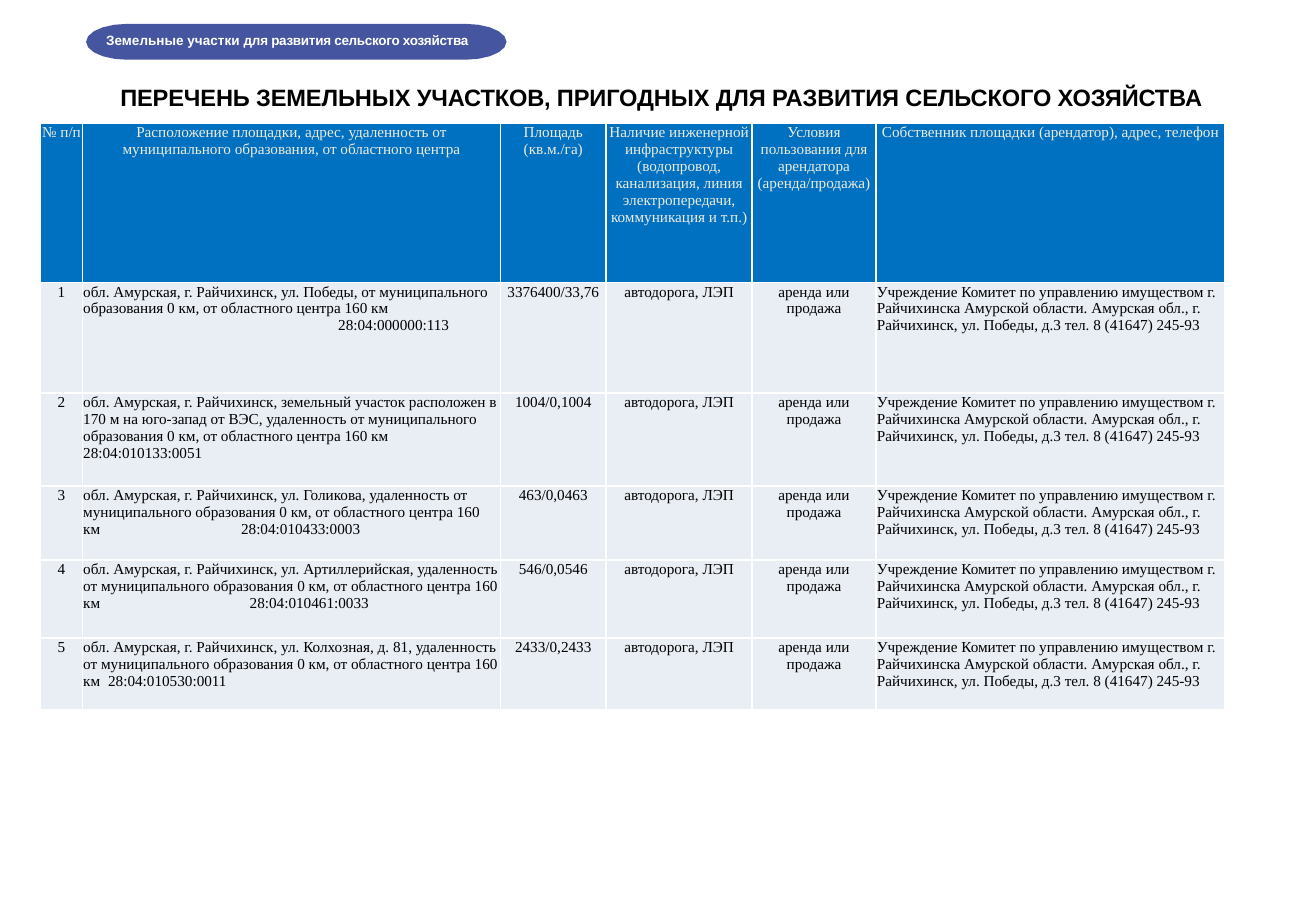
import math

from lxml import etree
from pptx import Presentation
from pptx import util as u
from pptx.dml.color import RGBColor
from pptx.enum import text
from pptx.oxml import ns

CENTER, LEFT = text.PP_ALIGN.CENTER, text.PP_ALIGN.LEFT
COLUMN_WIDTHS = [0.87, 8.74, 2.21, 3.05, 2.59, 7.29]
ROW_HEIGHTS = [3.33, 2.31, 1.94, 1.55, 1.63, 1.5]
COLUMN_ALIGNMENTS = [CENTER, LEFT, CENTER, CENTER, CENTER, LEFT]
HEADERS = [
    "№ п/п",
    "Расположение площадки, адрес, удаленность от муниципального образования, от областного центра",
    "Площадь (кв.м./га)",
    "Наличие инженерной инфраструктуры (водопровод, канализация, линия электропередачи, "
    "коммуникация и т.п.)",
    "Условия пользования для арендатора (аренда/продажа)",
    "Собственник площадки (арендатор), адрес, телефон",
]
DISTANCE = "муниципального образования 0 км, от областного центра 160 км"
# Location, separator, cadastral number, tab stop of the number in cm, area
PLOTS = [
    ("ул. Победы, от", "\v\t", "28:04:000000:113", 5.33, "3376400/33,76"),
    ("земельный участок расположен в 170 м на юго-запад от ВЭС, удаленность от",
     "\v", "28:04:010133:0051", None, "1004/0,1004"),
    ("ул. Голикова, удаленность от", "\t", "28:04:010433:0003", 3.3, "463/0,0463"),
    ("ул. Артиллерийская, удаленность от", "\t", "28:04:010461:0033", 3.48, "546/0,0546"),
    ("ул. Колхозная, д. 81, удаленность от", "\t", "28:04:010530:0011", 0.52, "2433/0,2433"),
]
OWNER = ("Учреждение Комитет по управлению имуществом г. Райчихинска Амурской области. "
         "Амурская обл., г. Райчихинск, ул. Победы, д.3 тел. 8 (41647) 245-93")


def rgb(color):
    return RGBColor.from_string(color)


def format_runs(paragraph, font, size, color, bold=False):
    for run in paragraph.runs:
        run.font.name = font
        run.font.size = u.Pt(size)
        run.font.bold = bold
        run.font.color.rgb = rgb(color)


def add_line_of_text(slide, box, parts, size, color, alignment):
    """Add bold text from (words, letter spacing in hundredths of a point) parts."""
    frame = slide.shapes.add_textbox(*map(u.Cm, box)).text_frame
    frame.word_wrap = True
    frame.margin_left = frame.margin_right = frame.margin_bottom = 0
    frame.margin_top = u.Cm(0.03)
    paragraph = frame.paragraphs[0]
    paragraph.alignment = alignment
    paragraph.space_before = u.Pt(1)
    for words, spacing in parts:
        run = paragraph.add_run()
        run.text = words
        run.font._element.set("spc", str(spacing))
    format_runs(paragraph, "Arial", size, color, bold=True)


def add_section_badge(slide, left, top, width, height):
    """Add a bar with half-elliptical ends and its label."""
    end = 0.86
    points = []
    for center, start in ((left + end, 90), (left + width - end, 270)):
        for angle in range(start, start + 181, 18):
            turn = math.radians(angle)
            points.append((u.Cm(center + end * math.cos(turn)),
                           u.Cm(top + height / 2 * (1 - math.sin(turn)))))
    builder = slide.shapes.build_freeform(*points[0])
    builder.add_line_segments(points[1:], close=True)
    badge = builder.convert_to_shape()
    badge.shadow.inherit = False
    badge.fill.solid()
    badge.fill.fore_color.rgb = rgb("46559F")
    badge.line.fill.background()
    add_line_of_text(slide, (left + 0.42, top + 0.15, 10.44, 0.38),
                     [("Земельные участки ", 0), ("для развития сельского хозяйства", -20)],
                     8, "FFFFFF", LEFT)


def add_borders(cell, color):
    properties = cell._tc.get_or_add_tcPr()
    for side in ("lnL", "lnR", "lnT", "lnB"):
        line = etree.SubElement(properties, ns.qn(f"a:{side}"), w=str(u.Pt(1)))
        fill = etree.SubElement(line, ns.qn("a:solidFill"))
        etree.SubElement(fill, ns.qn("a:srgbClr"), val=color)


def add_tab_stop(paragraph, position):
    tabs = etree.SubElement(paragraph._p.get_or_add_pPr(), ns.qn("a:tabLst"))
    etree.SubElement(tabs, ns.qn("a:tab"), pos=str(u.Cm(position)), algn="l")


def fill_cell(cell, words, alignment, color, background):
    cell.margin_left = cell.margin_right = cell.margin_top = u.Cm(0.02)
    cell.margin_bottom = 0
    add_borders(cell, "FFFFFF")
    cell.fill.solid()
    cell.fill.fore_color.rgb = rgb(background)
    paragraph = cell.text_frame.paragraphs[0]
    paragraph.text = words
    paragraph.alignment = alignment
    format_runs(paragraph, "Times New Roman", 9, color)


def add_plots_table(slide, left, top):
    box = (left, top, sum(COLUMN_WIDTHS), sum(ROW_HEIGHTS))
    table = slide.shapes.add_table(len(ROW_HEIGHTS), len(COLUMN_WIDTHS), *map(u.Cm, box)).table
    table.first_row = table.horz_banding = False
    for column, width in zip(table.columns, COLUMN_WIDTHS):
        column.width = u.Cm(width)
    for row, height in zip(table.rows, ROW_HEIGHTS):
        row.height = u.Cm(height)

    for column, header in enumerate(HEADERS):
        fill_cell(table.cell(0, column), header, CENTER, "EEECE1", "0070C0")
    for number, (place, separator, cadastral, tab, area) in enumerate(PLOTS, 1):
        location = f"обл. Амурская, г. Райчихинск, {place} {DISTANCE}{separator}{cadastral}"
        values = [str(number), location, area, "автодорога, ЛЭП", "аренда или продажа", OWNER]
        for column, (value, alignment) in enumerate(zip(values, COLUMN_ALIGNMENTS)):
            fill_cell(table.cell(number, column), value, alignment, "000000", "E9EDF4")
        if tab:
            add_tab_stop(table.cell(number, 1).text_frame.paragraphs[0], tab)


def main():
    presentation = Presentation()
    presentation.slide_width = u.Cm(27.51)
    presentation.slide_height = u.Cm(19.05)
    slide = presentation.slides.add_slide(presentation.slide_layouts[6])
    add_line_of_text(
        slide, (2.25, 1.7, 23.14, 0.64),
        [("ПЕРЕЧЕНЬ ЗЕМЕЛЬНЫХ УЧАСТКОВ, ПРИГОДНЫХ ДЛЯ РАЗВИТИЯ СЕЛЬСКОГО ХОЗЯЙСТВА", -10)],
        14, "000000", CENTER)
    add_section_badge(slide, 1.8, 0.5, 8.79, 0.75)
    add_plots_table(slide, 0.85, 2.58)
    presentation.save("out.pptx")


if __name__ == "__main__":
    main()
